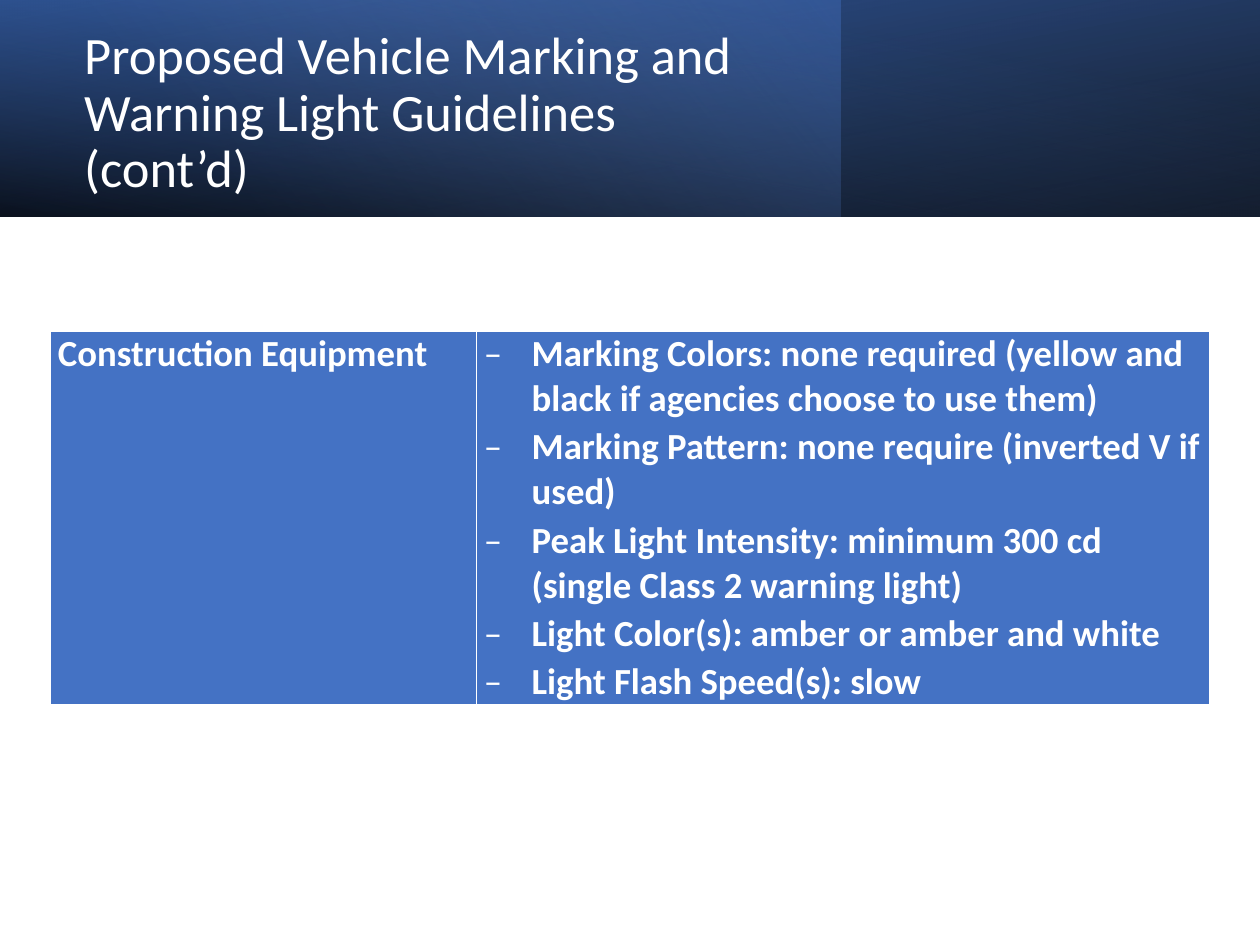
"""Build the vehicle marking guidelines slide with its banner and table."""
from lxml import etree
from pptx import Presentation, util as u
from pptx.dml.color import RGBColor
from pptx.enum import shapes, text
from pptx.oxml import ns

TITLE = "Proposed Vehicle Marking and Warning Light Guidelines (cont’d)"
CATEGORY = ["Construction Equipment"]
GUIDELINES = [
    "Marking Colors: none required (yellow and black if agencies choose to use them)",
    "Marking Pattern: none require (inverted V if used)",
    "Peak Light Intensity: minimum 300 cd (single Class 2 warning light)",
    "Light Color(s): amber or amber and white",
    "Light Flash Speed(s): slow",
]
WHITE, BLUE = "FFFFFF", "4472C4"
BANNER_HEIGHT = 1.72
BANNER = [
    {"width": 10, "rotation": 180, "flip": True, "angle": 100,
     "stops": [(0, "000000", 96), (100, "2F5597", 100)]},
    {"width": 6.67, "rotation": 0, "flip": False, "angle": 140,
     "stops": [(0, BLUE, 41), (74, "8FAADC", 0)]},
    {"width": 10, "rotation": 0, "flip": True, "angle": 260,
     "stops": [(0, "000000", 63), (78, BLUE, 15)]},
]
COLUMNS = [3.38, 5.82]
TABLE_HEIGHT = 2.96
INDENT = 0.38
BORDERS = {"lnL": 1, "lnR": 1, "lnT": 0.75, "lnB": 1}
TITLE_FRAME = {"word_wrap": True, "vertical_anchor": text.MSO_ANCHOR.MIDDLE}
TITLE_PARA = {"line_spacing": 0.9}
TITLE_FONT = {"name": "Calibri", "size": u.Pt(30)}
CELL_FORMAT = {"margin_left": u.Inches(0.06), "margin_right": u.Inches(0.06),
               "margin_top": 0, "margin_bottom": 0}
CELL_PARA = {"space_before": u.Pt(1), "space_after": u.Pt(1)}
CELL_FONT = {"name": "Calibri", "size": u.Pt(21), "bold": True}


def color(value):
    return RGBColor.from_string(value)


def apply(target, values):
    for name, value in values.items():
        setattr(target, name, value)


def add_xml(parent, tag, **attributes):
    return etree.SubElement(parent, ns.qn(tag), attributes)


def add_color(parent, value, opacity=100):
    tint = add_xml(parent, "a:srgbClr", val=value)
    if opacity < 100:
        add_xml(tint, "a:alpha", val=str(opacity * 1000))


def add_banner_layer(page, layer):
    box = page.shapes.add_shape(shapes.MSO_SHAPE.RECTANGLE, 0, 0,
                                u.Inches(layer["width"]), u.Inches(BANNER_HEIGHT))
    box.shadow.inherit = False
    box.rotation = layer["rotation"]
    box.line.fill.background()
    properties = box._element.spPr
    if layer["flip"]:
        properties.find(ns.qn("a:xfrm")).set("flipH", "1")
    gradient = etree.Element(ns.qn("a:gradFill"), rotWithShape="1")
    stops = add_xml(gradient, "a:gsLst")
    for position, value, opacity in layer["stops"]:
        add_color(add_xml(stops, "a:gs", pos=str(position * 1000)), value, opacity)
    add_xml(gradient, "a:lin", ang=str(layer["angle"] * 60000), scaled="0")
    properties.find(ns.qn("a:prstGeom")).addnext(gradient)


def write(para, words, para_format, font_format):
    apply(para, para_format)
    span = para.add_run()
    span.text = words
    apply(span.font, font_format)
    span.font.color.rgb = color(WHITE)


def add_bullet(para):
    properties = para._p.get_or_add_pPr()
    properties.set("marL", str(u.Inches(INDENT)))
    properties.set("indent", str(-u.Inches(INDENT)))
    add_xml(properties, "a:buFont", typeface="Calibri")
    add_xml(properties, "a:buChar", char="–")


def add_borders(cell):
    properties = cell._tc.get_or_add_tcPr()
    for index, (side, width) in enumerate(BORDERS.items()):
        line = etree.Element(ns.qn("a:" + side), w=str(u.Pt(width)))
        add_color(add_xml(line, "a:solidFill"), WHITE)
        properties.insert(index, line)


def fill_cell(cell, lines, bulleted):
    apply(cell, CELL_FORMAT)
    cell.fill.solid()
    cell.fill.fore_color.rgb = color(BLUE)
    add_borders(cell)
    for index, words in enumerate(lines):
        frame = cell.text_frame
        para = frame.add_paragraph() if index else frame.paragraphs[0]
        write(para, words, CELL_PARA, CELL_FONT)
        if bulleted:
            add_bullet(para)


def main():
    deck = Presentation()
    deck.slide_width, deck.slide_height = u.Inches(10), u.Inches(7.5)
    page = deck.slides.add_slide(deck.slide_layouts[6])
    for layer in BANNER:
        add_banner_layer(page, layer)

    title = page.shapes.add_textbox(u.Inches(0.57), u.Inches(0.27),
                                    u.Inches(5.79), u.Inches(1.27))
    apply(title.text_frame, TITLE_FRAME)
    write(title.text_frame.paragraphs[0], TITLE, TITLE_PARA, TITLE_FONT)

    table = page.shapes.add_table(1, len(COLUMNS), u.Inches(0.4), u.Inches(2.63),
                                  u.Inches(sum(COLUMNS)), u.Inches(TABLE_HEIGHT)).table
    for index, (width, lines) in enumerate(zip(COLUMNS, (CATEGORY, GUIDELINES))):
        table.columns[index].width = u.Inches(width)
        fill_cell(table.cell(0, index), lines, bulleted=index == 1)
    deck.save("out.pptx")


if __name__ == "__main__":
    main()
